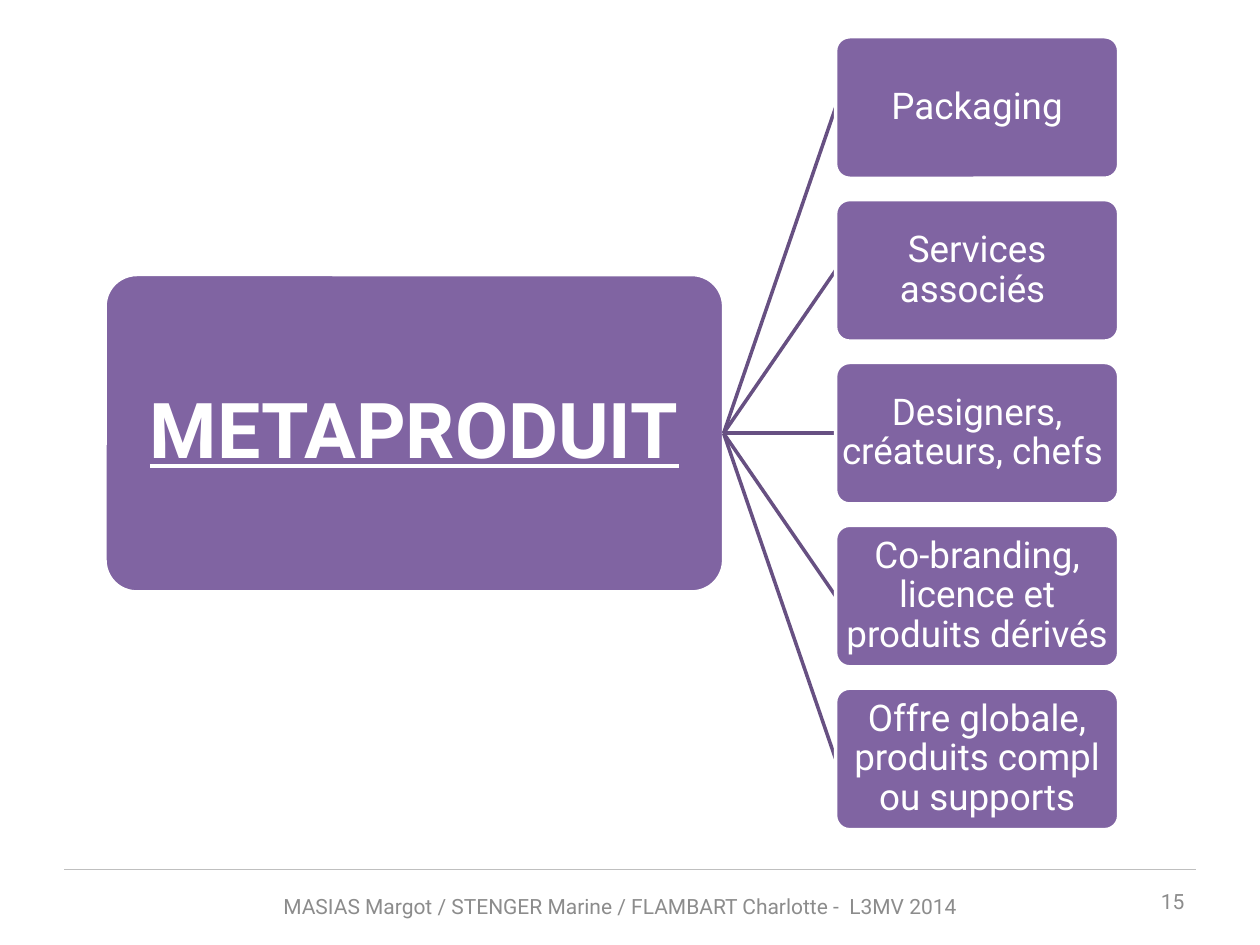
from dataclasses import dataclass
from lxml.etree import SubElement
from pptx import Presentation
from pptx.dml.color import RGBColor
from pptx.enum.shapes import MSO_CONNECTOR as Connector, MSO_SHAPE as Shape
from pptx.enum.text import MSO_ANCHOR as Anchor, PP_ALIGN as Align
from pptx.oxml.ns import qn
from pptx.util import Pt


@dataclass
class Theme:
    font: str = "Roboto"
    box: str = "8064A2"
    branch: str = "675082"
    rule: str = "BFBFBF"
    light: str = "FFFFFF"
    muted: str = "8C8C8C"
    root_size: int = 44
    item_size: int = 21
    footer_size: int = 12


theme = Theme()


def write(shape, text, size, color, align=Align.CENTER, margin=None, spacing=1.0, strong=False):
    frame = shape.text_frame
    frame.word_wrap = True
    frame.vertical_anchor = Anchor.MIDDLE
    if margin is not None:
        frame.margin_left = frame.margin_right = Pt(margin)
        frame.margin_top = frame.margin_bottom = Pt(margin)
    paragraph = frame.paragraphs[0]
    paragraph.alignment = align
    paragraph.line_spacing = spacing
    run = paragraph.add_run()
    run.text = text
    run.font.name = theme.font
    run.font.size = Pt(size)
    run.font.color.rgb = RGBColor.from_string(color)
    run.font.bold = run.font.underline = strong


def connect(start, end, color, width):
    line = slide.shapes.add_connector(Connector.STRAIGHT, *map(Pt, start + end))
    line.line.color.rgb = RGBColor.from_string(color)
    line.line.width = Pt(width)
    SubElement(line._element.spPr, qn("a:effectLst"))


presentation = Presentation()
presentation.slide_width = Pt(720)
presentation.slide_height = Pt(540)
slide = presentation.slides.add_slide(presentation.slide_layouts[6])

connect((36.75, 496.8), (683.25, 496.8), theme.rule, 0.75)

items = [
    "Packaging",
    "Services associés ",
    "Designers, créateurs, chefs ",
    "Co-branding, licence et produits dérivés",
    "Offre globale, produits compl ou supports",
]
root_left, root_width, root_height = 60, 353.5, 181.4
item_left, item_top, item_width, item_height, pitch = 477.5, 21, 161.8, 80.9, 93.06
middle = item_top + pitch * (len(items) - 1) / 2 + item_height / 2
root_right = root_left + root_width

boxes = [("METAPRODUIT", root_left, middle - root_height / 2, root_width, root_height,
          theme.root_size, 2, True)]
for index, item in enumerate(items):
    boxes.append((item, item_left, item_top + index * pitch, item_width, item_height,
                  theme.item_size, 1, False))

for text, left, top, width, height, size, margin, is_root in boxes:
    if not is_root:
        connect((root_right, middle), (left, top + height / 2), theme.branch, 2)
    box = slide.shapes.add_shape(Shape.ROUNDED_RECTANGLE, Pt(left), Pt(top), Pt(width), Pt(height))
    box.adjustments[0] = 0.1
    box.shadow.inherit = False
    box.fill.solid()
    box.fill.fore_color.rgb = RGBColor.from_string(theme.box)
    box.line.color.rgb = RGBColor.from_string(theme.light)
    box.line.width = Pt(2)
    write(box, text, size, theme.light, margin=margin, spacing=0.9, strong=is_root)

footers = [
    ("15", 516.25, 500.4, 167.75, 28.8, Align.RIGHT),
    ("MASIAS Margot / STENGER Marine / FLAMBART Charlotte -  L3MV 2014",
     110.9, 508.3, 487.4, 18.7, Align.CENTER),
]
for text, left, top, width, height, align in footers:
    footer = slide.shapes.add_textbox(Pt(left), Pt(top), Pt(width), Pt(height))
    write(footer, text, theme.footer_size, theme.muted, align)

presentation.save("out.pptx")
